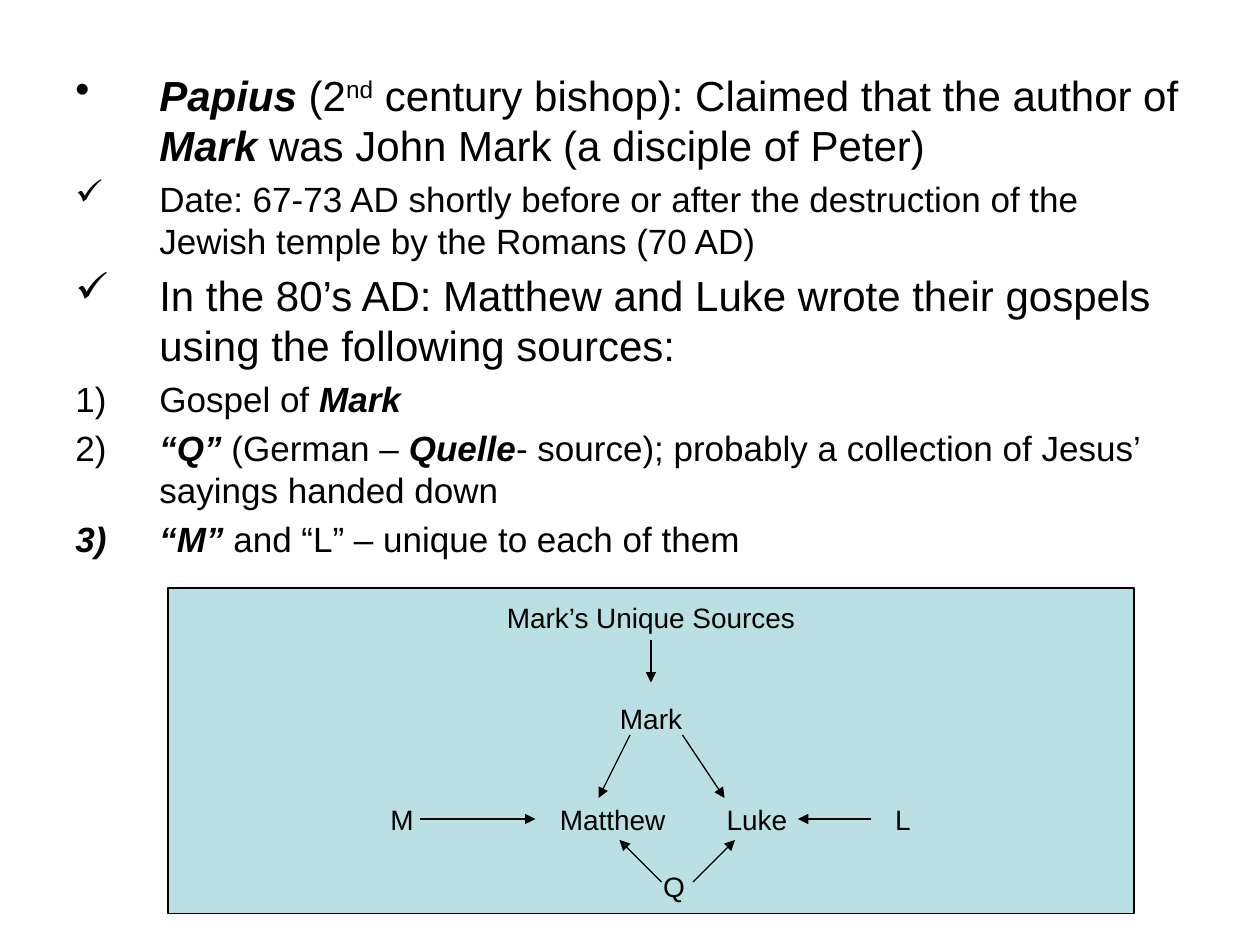
from lxml import etree
from pptx import Presentation
from pptx.dml.color import RGBColor
from pptx.enum import shapes, text
from pptx.oxml import ns
from pptx.util import Pt

BLACK = RGBColor(0, 0, 0)
TEAL = RGBColor(0xBB, 0xE0, 0xE3)
FONT = "Arial"
INDENT = 48

CHECK = ("buChar", {"char": "✓"})
ITEMS = [
    (24, ("buChar", {"char": "•"}),
     [("Papius", "em"), (" (2", ""), ("nd", "sup"),
      (" century bishop): Claimed that the author of ", ""),
      ("Mark", "em"), (" was John Mark (a disciple of Peter)", "")]),
    (20, CHECK,
     [("Date: 67-73 AD shortly before or after the destruction of the "
       "Jewish temple by the Romans (70 AD)", "")]),
    (24, CHECK,
     [("In the 80’s AD: Matthew and Luke wrote their gospels using the "
       "following sources:", "")]),
    (20, ("buAutoNum", {"type": "arabicParenR"}),
     [("Gospel of ", ""), ("Mark", "em")]),
    (20, ("buNone", {}),
     [("2)", ""), ("\t“Q”", "em"), (" (German – ", ""), ("Quelle", "em"),
      ("- source); probably a collection of Jesus’ sayings handed down", "")]),
    (20, ("buAutoNum", {"type": "arabicParenR", "startAt": "3"}),
     [("“M”", "em"), (" and “L” – unique to each of them", "")]),
]
LABELS = [
    ("Mark’s Unique Sources", 372, 352.5),
    ("Mark", 372, 410.5),
    ("M", 229, 468),
    ("Matthew", 350, 468),
    ("Luke", 432.5, 468),
    ("L", 516, 468),
    ("Q", 385, 506.5),
]
ARROWS = [
    (372, 366, 372, 390),
    (360, 420, 342, 456),
    (378, 504, 354, 480),
    (390, 420, 414, 456),
    (240, 468, 306, 468),
    (498, 468, 456, 468),
    (396, 504, 420, 480),
]


def add_tag(parent, tag, **attrs):
    return etree.SubElement(parent, ns.qn("a:" + tag), attrs)


def set_font(font, size):
    font.name = FONT
    font.size = Pt(size)
    font.color.rgb = BLACK


def add_item(para, size, bullet, runs):
    props = para._p.get_or_add_pPr()
    props.set("marL", str(Pt(INDENT)))
    props.set("indent", str(Pt(-INDENT)))
    para.space_before = Pt(size * 0.2)
    tag, attrs = bullet
    add_tag(props, tag, **attrs)
    set_font(para.font, size)
    for words, style in runs:
        run = para.add_run()
        run.text = words
        if style == "em":
            run.font.bold = run.font.italic = True
        elif style == "sup":
            run.font._element.set("baseline", "30000")


def add_list(slide):
    frame = slide.shapes.add_textbox(Pt(36), Pt(36), Pt(648), Pt(486)).text_frame
    frame.word_wrap = True
    for i, item in enumerate(ITEMS):
        para = frame.add_paragraph() if i else frame.paragraphs[0]
        add_item(para, *item)


def add_panel(slide):
    panel = slide.shapes.add_shape(
        shapes.MSO_SHAPE.RECTANGLE, Pt(96), Pt(336), Pt(552), Pt(186))
    panel.shadow.inherit = False
    panel.fill.solid()
    panel.fill.fore_color.rgb = TEAL
    panel.line.color.rgb = BLACK
    panel.line.width = Pt(0.75)


def add_label(slide, words, x, y):
    wide, high = 12 * len(words), 20
    box = slide.shapes.add_textbox(
        Pt(x - wide / 2), Pt(y - high / 2), Pt(wide), Pt(high))
    frame = box.text_frame
    frame.margin_left = frame.margin_right = 0
    frame.margin_top = frame.margin_bottom = 0
    frame.vertical_anchor = text.MSO_ANCHOR.MIDDLE
    frame.word_wrap = False
    para = frame.paragraphs[0]
    para.text = words
    para.alignment = text.PP_ALIGN.CENTER
    set_font(para.font, 16)


def add_arrow(slide, *ends):
    arrow = slide.shapes.add_connector(
        shapes.MSO_CONNECTOR.STRAIGHT, *map(Pt, ends))
    arrow.line.color.rgb = BLACK
    arrow.line.width = Pt(0.75)
    add_tag(arrow.line._get_or_add_ln(), "tailEnd", type="triangle")
    add_tag(arrow._element.spPr, "effectLst")


def main():
    deck = Presentation()
    deck.slide_width, deck.slide_height = Pt(720), Pt(540)
    slide = deck.slides.add_slide(deck.slide_layouts[6])
    add_list(slide)
    add_panel(slide)
    for label in LABELS:
        add_label(slide, *label)
    for ends in ARROWS:
        add_arrow(slide, *ends)
    deck.save("out.pptx")


if __name__ == "__main__":
    main()
